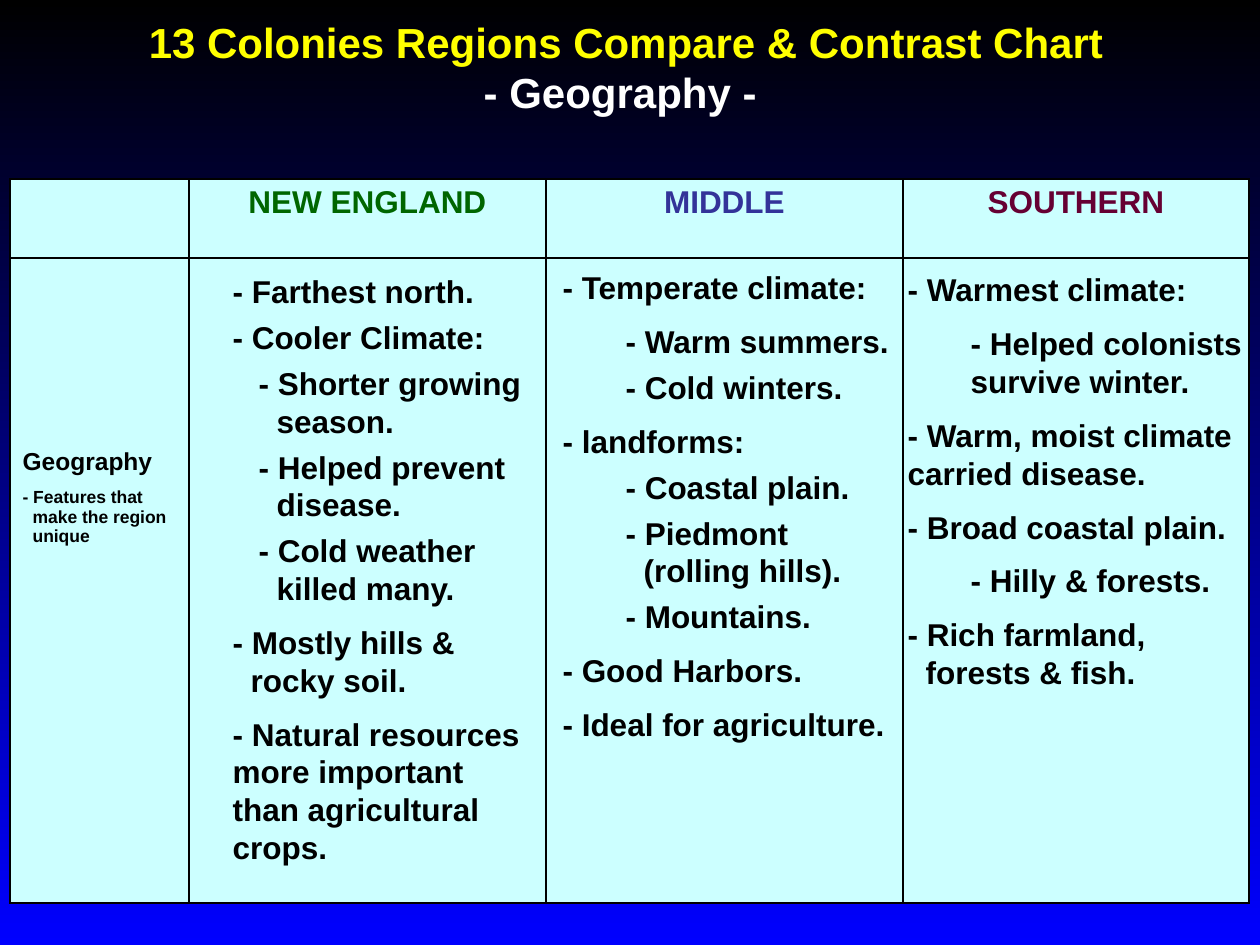
import pptx
import pptx.dml.color
import pptx.enum.text
import pptx.oxml
import pptx.util
import lxml.etree

PX = 914400 // 126
COLORS = {"black": "000000", "blue": "0000FF", "yellow": "FFFF00", "white": "FFFFFF",
          "cell": "CCFFFF", "green": "006600", "indigo": "333399", "plum": "660033"}
NS = "http://schemas.openxmlformats.org/drawingml/2006/main"
CENTER = pptx.enum.text.PP_ALIGN.CENTER
LEFT = pptx.enum.text.PP_ALIGN.LEFT
SMALL, BIG = 4.6, 9.2
SUB = 63


def rgb(name):
    return pptx.dml.color.RGBColor.from_string(COLORS[name])


def write(tf, lines, align=LEFT):
    for i, (text, size, color, gap, indent) in enumerate(lines):
        p = tf.paragraphs[0] if i == 0 else tf.add_paragraph()
        fmt = {"alignment": align, "space_before": pptx.util.Pt(gap),
               "space_after": pptx.util.Pt(0), "line_spacing": 1.0}
        for name, value in fmt.items():
            setattr(p, name, value)
        pPr = p._p.get_or_add_pPr()
        pPr.set("marL", str(indent * PX))
        pPr.set("indent", "0")
        lxml.etree.SubElement(pPr, f"{{{NS}}}buNone")
        r = p.add_run()
        r.text = text
        font = {"name": "Arial", "size": pptx.util.Pt(size), "bold": True}
        for name, value in font.items():
            setattr(r.font, name, value)
        r.font.color.rgb = rgb(color)


prs = pptx.Presentation()
prs.slide_width, prs.slide_height = pptx.util.Inches(10), pptx.util.Inches(7.5)
s = prs.slides.add_slide(prs.slide_layouts.get_by_name("Comparison"))

bg = s.background.fill
bg.gradient()
bg.gradient_angle = 270
for stop, color in zip(bg.gradient_stops, ("black", "blue")):
    stop.color.rgb = rgb(color)

new_england = [
    (0, 0, "- Farthest north."),
    (SMALL, 0, "- Cooler Climate:"),
    (SMALL, 26, "- Shorter growing"),
    (0, 44, "season."),
    (SMALL, 26, "- Helped prevent"),
    (0, 44, "disease."),
    (SMALL, 26, "- Cold weather"),
    (0, 44, "killed many."),
    (BIG, 0, "- Mostly hills &"),
    (0, 18, "rocky soil."),
    (BIG, 0, "- Natural resources more important than agricultural crops."),
]
middle = [
    (0, 0, "- Temperate climate:"),
    (BIG, SUB, "- Warm summers."),
    (SMALL, SUB, "- Cold winters."),
    (BIG, 0, "- landforms:"),
    (SMALL, SUB, "- Coastal plain."),
    (SMALL, SUB, "- Piedmont"),
    (0, SUB + 18, "(rolling hills)."),
    (SMALL, SUB, "- Mountains."),
    (BIG, 0, "- Good Harbors."),
    (BIG, 0, "- Ideal for agriculture."),
]
southern = [
    (0, 0, "- Warmest climate:"),
    (BIG, SUB, "- Helped colonists"),
    (0, SUB, "survive winter."),
    (BIG, 0, "- Warm, moist climate"),
    (0, 0, "carried disease."),
    (BIG, 0, "- Broad coastal plain."),
    (BIG, SUB, "- Hilly & forests."),
    (BIG, 0, "- Rich farmland,"),
    (0, 18, "forests & fish."),
]
title = [("13 Colonies Regions Compare & Contrast Chart", 24, "yellow", 0, 0),
         ("- Geography - ", 24, "white", 0, 0)]
columns = [[(text, 18, "black", gap, indent) for gap, indent, text in lines]
           for lines in (new_england, middle, southern)]
boxes = [(0, (117, 10, 1018, 113), title, CENTER),
         (1, (220, 266, 325, 610), columns[0], LEFT),
         (2, (550, 262, 363, 491), columns[1], LEFT),
         (3, (895, 264, 365, 437), columns[2], LEFT)]

holders = {sp.placeholder_format.idx: sp for sp in s.placeholders}
for idx, box, lines, align in boxes:
    sp = holders.pop(idx)
    for name, value in zip(("left", "top", "width", "height"), box):
        setattr(sp, name, value * PX)
    frame = {"word_wrap": True, "auto_size": pptx.enum.text.MSO_AUTO_SIZE.NONE,
             "vertical_anchor": pptx.enum.text.MSO_ANCHOR.TOP}
    for name, value in frame.items():
        setattr(sp.text_frame, name, value)
    write(sp.text_frame, lines, align)
for sp in holders.values():
    sp.element.getparent().remove(sp.element)

widths, heights = (179, 357, 357, 346), (79, 645)
gf = s.shapes.add_table(2, 4, 10 * PX, 179 * PX, sum(widths) * PX, sum(heights) * PX)
s.shapes.title.element.addprevious(gf.element)
table = gf.table
for col, width in zip(table.columns, widths):
    col.width = width * PX
for row, height in zip(table.rows, heights):
    row.height = height * PX
for cell in table.iter_cells():
    tcPr = cell._tc.get_or_add_tcPr()
    for side in ("lnL", "lnR", "lnT", "lnB"):
        tcPr.append(pptx.oxml.parse_xml(
            f'<a:{side} xmlns:a="{NS}" w="12700"><a:solidFill>'
            f'<a:srgbClr val="{COLORS["black"]}"/></a:solidFill></a:{side}>'))
    cell.fill.solid()
    cell.fill.fore_color.rgb = rgb("cell")

headers = [("NEW ENGLAND", "green"), ("MIDDLE", "indigo"), ("SOUTHERN", "plum")]
for i, (text, color) in enumerate(headers, 1):
    write(table.cell(0, i).text_frame, [(text, 18, color, 0, 0)], CENTER)
topic = table.cell(1, 0)
topic.margin_top = 190 * PX
write(topic.text_frame, [("Geography", 14, "black", 0, 0),
                         ("- Features that", 10, "black", 7, 0),
                         ("make the region", 10, "black", 0, 10),
                         ("unique", 10, "black", 0, 10)])

prs.save("out.pptx")
